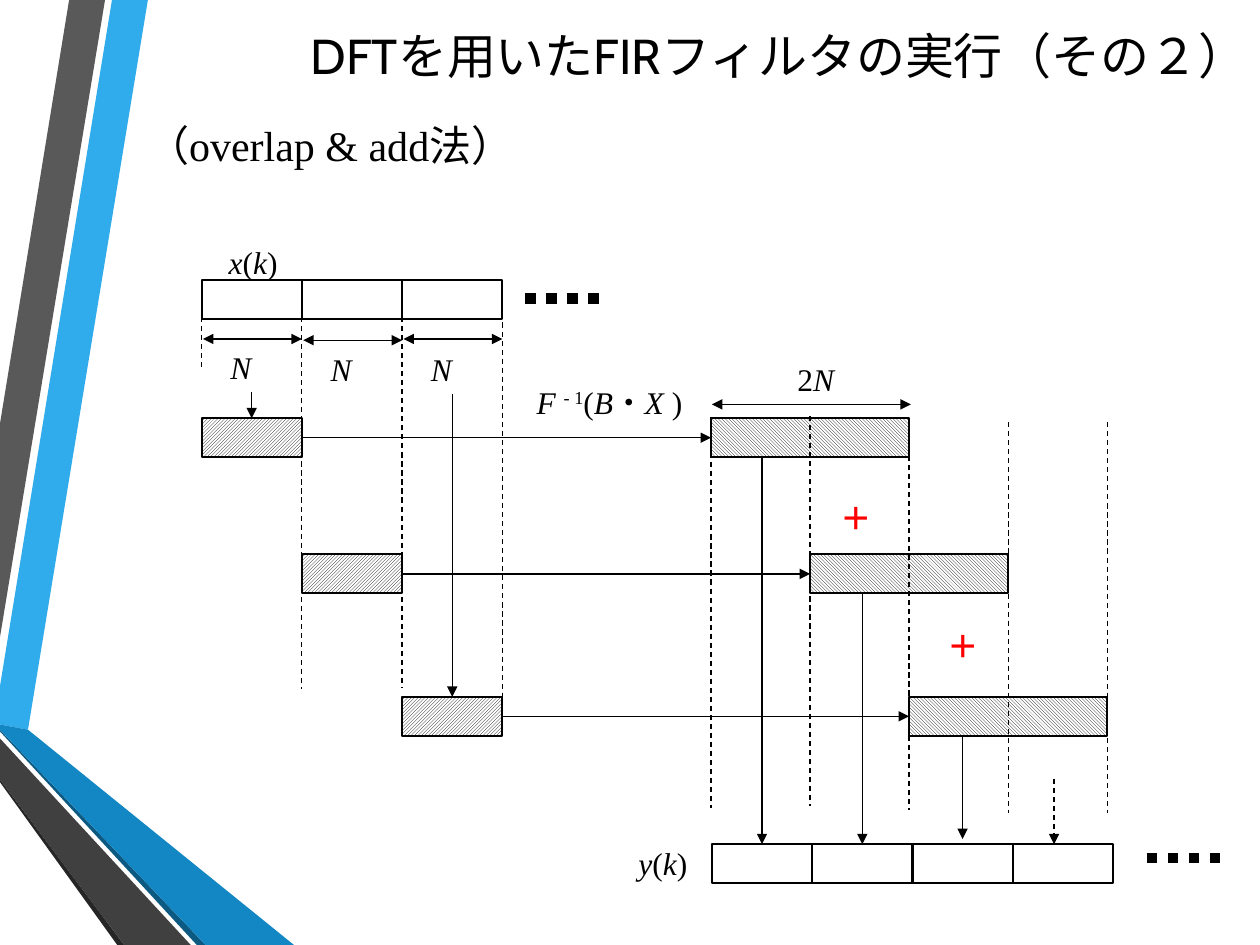
from lxml import etree
from pptx import Presentation
from pptx.dml.color import RGBColor
from pptx.enum.dml import MSO_LINE, MSO_PATTERN
from pptx.enum.shapes import MSO_CONNECTOR, MSO_SHAPE
from pptx.enum.text import MSO_ANCHOR, PP_ALIGN
from pptx.oxml.ns import qn
from pptx.util import Pt

STRAIGHT = MSO_CONNECTOR.STRAIGHT
RECTANGLE = MSO_SHAPE.RECTANGLE
DASH, DOT = MSO_LINE.DASH, MSO_LINE.ROUND_DOT
INPUT_HATCH = MSO_PATTERN.DARK_UPWARD_DIAGONAL
OUTPUT_HATCH = MSO_PATTERN.LIGHT_DOWNWARD_DIAGONAL
LEFT, CENTER, RIGHT = PP_ALIGN.LEFT, PP_ALIGN.CENTER, PP_ALIGN.RIGHT
TOP, MIDDLE = MSO_ANCHOR.TOP, MSO_ANCHOR.MIDDLE
SERIF = "Times New Roman"
BLACK, WHITE, RED = "000000", "FFFFFF", "FF0000"

CELL = 57.3          # width of one block of N samples
SHIFT = 56.6         # distance between neighbouring filtered blocks
BLOCK_HEIGHT = 22.3
ROWS = (239, 316.8, 398.2)

# Corner decoration: colour and outline points
RIBBONS = [
    ("30ACEC", [(0, 392), (0, 414), (16, 417), (84.5, 0), (64, 0)]),
    ("595959", [(60, 0), (39.5, 0), (0, 242), (0, 364)]),
    ("262626", [(0, 445.5), (0, 447), (67, 540), (71, 540)]),
    ("0C5A82", [(0, 417), (0, 418), (112.5, 540), (117.5, 540)]),
    ("1287C3", [(0, 417), (117.5, 540), (168, 540), (16, 417), (0, 414)]),
    ("404040", [(0, 445.5), (71, 540), (109, 540), (0, 422)]),
]


def color(value):
    return RGBColor.from_string(value)


def add_text(slide, left, top, width, height, runs, size=18, font=SERIF,
             align=LEFT, anchor=TOP, fill=BLACK, bold=False):
    """Runs are (text, style) pairs; style may hold i (italic) or ^ (superscript)."""
    shape = slide.shapes.add_textbox(Pt(left), Pt(top), Pt(width), Pt(height))
    frame = shape.text_frame
    frame.word_wrap = True
    frame.vertical_anchor = anchor
    paragraph = frame.paragraphs[0]
    paragraph.alignment = align
    paragraph.font.name = font
    paragraph.font.size = Pt(size)
    paragraph.font.bold = bold
    paragraph.font.color.rgb = color(fill)
    for text, style in runs:
        run = paragraph.add_run()
        run.text = text
        if "i" in style:
            run.font.italic = True
        if "^" in style:
            run._r.get_or_add_rPr().set("baseline", "30000")


def add_block(slide, left, top, width, hatch=None):
    shape = slide.shapes.add_shape(RECTANGLE, Pt(left), Pt(top), Pt(width), Pt(BLOCK_HEIGHT))
    shape.shadow.inherit = False
    if hatch is None:
        shape.fill.solid()
        shape.fill.fore_color.rgb = color(WHITE)
    else:
        shape.fill.patterned()
        shape.fill.pattern = hatch
        shape.fill.fore_color.rgb = color(BLACK)
        shape.fill.back_color.rgb = color(WHITE)
    shape.line.color.rgb = color(BLACK)
    shape.line.width = Pt(1.25)
    return shape


def add_line(slide, x1, y1, x2, y2, width=0.75, dash=None, ends=()):
    """Ends lists the arrowheads: headEnd at the start, tailEnd at the finish."""
    line = slide.shapes.add_connector(STRAIGHT, Pt(x1), Pt(y1), Pt(x2), Pt(y2))
    line.line.color.rgb = color(BLACK)
    line.line.width = Pt(width)
    if dash is not None:
        line.line.dash_style = dash
    outline = line.line._get_or_add_ln()
    for end in ends:
        etree.SubElement(outline, qn("a:" + end), type="triangle")
    etree.SubElement(line._element.spPr, qn("a:effectLst"))
    return line


def add_arrow(slide, x1, y1, x2, y2, dash=None):
    return add_line(slide, x1, y1, x2, y2, dash=dash, ends=("tailEnd",))


def add_span(slide, left, right, y):
    add_line(slide, left, y, right, y, ends=("headEnd", "tailEnd"))


def add_ellipsis(slide, left, y):
    add_line(slide, left, y, left + 47.5, y, width=6, dash=DOT)


def draw_ribbons(slide, left, top):
    for fill, points in RIBBONS:
        (x, y), *others = [(Pt(left + px), Pt(top + py)) for px, py in points]
        builder = slide.shapes.build_freeform(x, y)
        builder.add_line_segments(others, close=True)
        shape = builder.convert_to_shape()
        shape.shadow.inherit = False
        shape.fill.solid()
        shape.fill.fore_color.rgb = color(fill)
        shape.line.fill.background()


def draw_headings(slide, left, top):
    add_text(slide, left + 36, top, 607, 62.6, [("DFTを用いたFIRフィルタの実行（その２）", "")],
             size=28, font="Cabin", align=RIGHT, anchor=MIDDLE)
    add_text(slide, left, top + 64.8, 643, 36, [("（overlap & add法）", "")], size=24)


def draw_input(slide, left, top):
    """Input signal cut into blocks of N; returns the hatched blocks."""
    for index in range(3):
        add_block(slide, left + index * CELL, top, CELL)
    add_ellipsis(slide, left + 185, top + 10.9)
    add_text(slide, left - 15, top - 24.4, 89, 28.8,
             [("x", "i"), ("(", ""), ("k", "i"), (")", "")], align=CENTER)
    blocks = [add_block(slide, left + index * CELL, row, CELL, INPUT_HATCH)
              for index, row in enumerate(ROWS)]

    # Block lengths
    for index, (span_drop, label_drop) in enumerate([(33.9, 35.3), (34.6, 36.7), (33.9, 36.7)]):
        x = left + index * CELL
        add_span(slide, x + 0.8, x + CELL, top + span_drop)
        add_text(slide, x + 9.4, top + label_drop, 38, 28.8, [("N", "i")])

    # Guides below the block borders
    for index, (start, end) in enumerate([(11, 50.4), (11, 234), (11, 233.5), (24.5, 247.7)]):
        x = left + index * CELL
        add_line(slide, x, top + start, x, top + end, dash=DASH)

    # Arrows down to the first and third blocks
    for index, start in ((0, 64.1), (2, 65.5)):
        x = left + (index + 0.5) * CELL
        arrow = add_arrow(slide, x, top + start, x, ROWS[index])
        arrow.end_connect(blocks[index], 0)
    return blocks


def draw_output(slide, left, input_blocks):
    """Filtered blocks of 2N, added where they overlap to give y(k)."""
    blocks = [add_block(slide, left + index * SHIFT, row, 2 * SHIFT, OUTPUT_HATCH)
              for index, row in enumerate(ROWS)]
    for source, target in zip(input_blocks, blocks):
        arrow = add_arrow(slide, 0, 0, 0, 0)
        arrow.begin_connect(source, 3)
        arrow.end_connect(target, 1)

    # Length and transform labels
    top = ROWS[0]
    add_span(slide, left + 0.5, left + 2 * SHIFT + 1, top - 7.9)
    add_text(slide, left + 42.3, top - 36.7, 38, 28.8, [("2", ""), ("N", "i")])
    add_text(slide, left - 106.8, top - 23.7, 110, 28.8,
             [("F ", "i"), ("- 1", "^"), ("(", ""), ("B", "i"), ("・", ""), ("X ", "i"), (")", "")])

    # Guides at the block borders
    for index, start in enumerate((-0.7, -1.4, 0.8, 2.2, 2.2)):
        x = left + index * SHIFT
        add_line(slide, x, top + start, x, top + start + 223.2, dash=DASH)

    # Result signal
    result_top = 482.4
    cells = [add_block(slide, left + 0.5 + index * CELL, result_top, CELL) for index in range(4)]
    centers = [left + 0.5 + (index + 0.5) * CELL for index in range(4)]
    add_ellipsis(slide, left + 249, result_top + 7.9)
    add_text(slide, left - 72, result_top - 3.6, 89, 28.8,
             [("y", "i"), ("(", ""), ("k", "i"), (")", "")], align=CENTER)

    # Arrows down to the result
    for index in range(2):
        arrow = add_arrow(slide, centers[index], ROWS[index] + BLOCK_HEIGHT,
                          centers[index], result_top)
        arrow.end_connect(cells[index], 0)
    add_arrow(slide, centers[2], ROWS[2] + BLOCK_HEIGHT, centers[2], result_top - 2.9)
    add_arrow(slide, centers[3] - 5, 445, centers[3] - 5, result_top, dash=DASH)

    # Plus signs between overlapping blocks
    for x, y in ((66.8, 281.5), (128, 355)):
        add_text(slide, left + x, y, 50, 28.8, [("＋", "")], fill=RED, bold=True)


def main():
    presentation = Presentation()
    presentation.slide_width, presentation.slide_height = Pt(720), Pt(540)
    slide = presentation.slides.add_slide(presentation.slide_layouts[6])
    draw_ribbons(slide, 0, 0)
    draw_headings(slide, 77, 0)
    input_blocks = draw_input(slide, 115.2, 159.8)
    draw_output(slide, 406.3, input_blocks)
    presentation.save("out.pptx")


if __name__ == "__main__":
    main()
